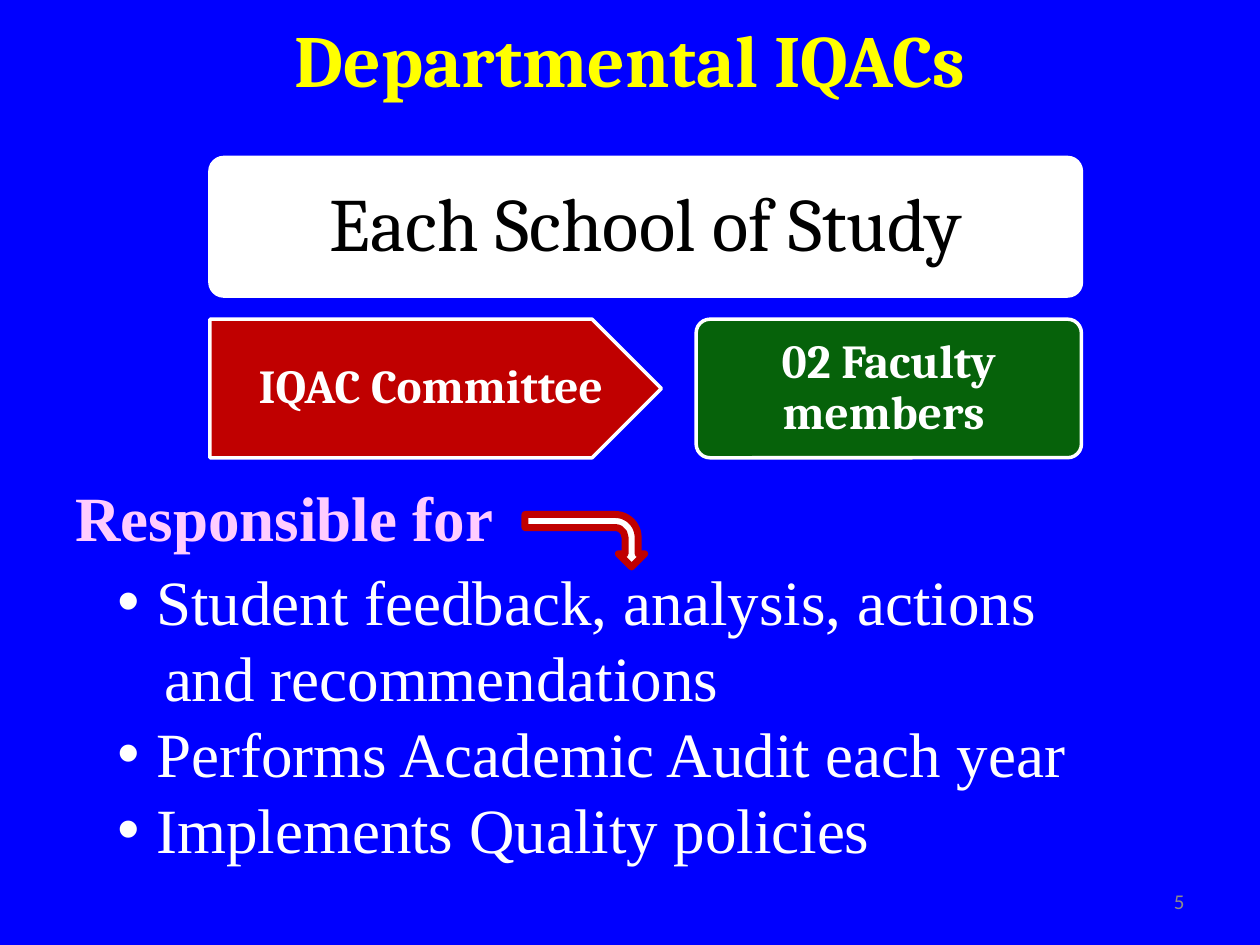
from dataclasses import dataclass
from typing import Optional

from lxml.etree import SubElement
from pptx import Presentation
from pptx.dml.color import RGBColor
from pptx.enum.shapes import MSO_SHAPE
from pptx.enum.text import MSO_ANCHOR, PP_ALIGN
from pptx.oxml.ns import qn
from pptx.util import Inches, Pt

COLORS = {
    "background": "0000FF",
    "title": "FFFF00",
    "heading": "FFCCFF",
    "white": "FFFFFF",
    "black": "000000",
    "red": "C00000",
    "green": "06620A",
    "number": "8C8C8C",
}
SLIDE_WIDTH, SLIDE_HEIGHT = Inches(10), Inches(7.5)
COLUMN, ROW = SLIDE_WIDTH / 120, SLIDE_HEIGHT / 90
CARD_LEFT, CARD_WIDTH, CARD_HEIGHT = 20, 83, 13.2
CARD_ROWS = (15, 30.4)
MEMBERS_WIDTH = 36.7


@dataclass(frozen=True)
class Frame:
    column: float
    row: float
    columns: float
    rows: float

    def lengths(self) -> tuple[int, int, int, int]:
        return (round(self.column * COLUMN), round(self.row * ROW),
                round(self.columns * COLUMN), round(self.rows * ROW))


@dataclass(frozen=True)
class Style:
    font: str
    size: float
    color: str
    bold: bool = False


@dataclass(frozen=True)
class Label:
    text: str
    frame: Frame
    style: Style
    alignment: PP_ALIGN = PP_ALIGN.LEFT
    anchor: MSO_ANCHOR = MSO_ANCHOR.MIDDLE
    wrap: bool = True


@dataclass(frozen=True)
class Card:
    text: str
    frame: Frame
    style: Style
    kind: MSO_SHAPE
    fill: str
    corner: Optional[float] = None
    margin_left: float = 0.11
    margin_right: float = 0.11


@dataclass(frozen=True)
class Duty:
    text: str
    indent: float
    bullet: bool = True


CARD_STYLE = Style("Cambria", 27, "white", True)
DUTY_STYLE = Style("Times New Roman", 36, "white")
DUTY_FRAME = Frame(10, 53, 105, 30.2)
ARROW_FRAME = Frame(53.2, 45.8, 5, 11.4)

LABELS = [
    Label("Departmental IQACs", Frame(6, 0, 108, 11),
          Style("Cambria", 42, "title", True), PP_ALIGN.CENTER),
    Label("5", Frame(86, 83.4, 28, 4.8),
          Style("Calibri", 12, "number"), PP_ALIGN.RIGHT),
    Label("Responsible for", Frame(6, 45, 45.6, 8.5),
          Style("Times New Roman", 36, "heading", True),
          anchor=MSO_ANCHOR.TOP, wrap=False),
]
CARDS = [
    Card("Each School of Study",
         Frame(CARD_LEFT, CARD_ROWS[0], CARD_WIDTH, CARD_HEIGHT),
         Style("Cambria", 43, "black"),
         MSO_SHAPE.ROUNDED_RECTANGLE, "white", 0.1),
    Card("IQAC Committee ",
         Frame(CARD_LEFT, CARD_ROWS[1], 43, CARD_HEIGHT),
         CARD_STYLE, MSO_SHAPE.PENTAGON, "red",
         margin_left=0.3, margin_right=0.02),
    Card("02 Faculty members ",
         Frame(CARD_LEFT + CARD_WIDTH - MEMBERS_WIDTH, CARD_ROWS[1],
               MEMBERS_WIDTH, CARD_HEIGHT),
         CARD_STYLE, MSO_SHAPE.ROUNDED_RECTANGLE, "green", 0.1),
]
DUTIES = [
    Duty("Student feedback, analysis, actions", 0.31),
    Duty("and recommendations", 0.37, False),
    Duty("Performs Academic Audit each year", 0.31),
    Duty("Implements Quality policies", 0.31),
]


def color(name: str) -> RGBColor:
    return RGBColor.from_string(COLORS[name])


def add_run(paragraph, text: str, style: Style) -> None:
    run = paragraph.add_run()
    run.text = text
    run.font.name = style.font
    run.font.size = Pt(style.size)
    run.font.bold = style.bold
    run.font.color.rgb = color(style.color)


def add_label(slide, label: Label) -> None:
    text_frame = slide.shapes.add_textbox(*label.frame.lengths()).text_frame
    text_frame.word_wrap = label.wrap
    text_frame.vertical_anchor = label.anchor
    paragraph = text_frame.paragraphs[0]
    paragraph.alignment = label.alignment
    add_run(paragraph, label.text, label.style)


def add_outlined_shape(slide, kind: MSO_SHAPE, frame: Frame,
                       fill: str, line: str, line_width: float):
    shape = slide.shapes.add_shape(kind, *frame.lengths())
    shape.shadow.inherit = False
    shape.fill.solid()
    shape.fill.fore_color.rgb = color(fill)
    shape.line.color.rgb = color(line)
    shape.line.width = Pt(line_width)
    return shape


def add_card(slide, card: Card) -> None:
    shape = add_outlined_shape(slide, card.kind, card.frame,
                               card.fill, "white", 2)
    if card.corner is not None:
        shape.adjustments[0] = card.corner
    text_frame = shape.text_frame
    text_frame.word_wrap = True
    text_frame.vertical_anchor = MSO_ANCHOR.MIDDLE
    text_frame.margin_left = Inches(card.margin_left)
    text_frame.margin_right = Inches(card.margin_right)
    paragraph = text_frame.paragraphs[0]
    paragraph.alignment = PP_ALIGN.CENTER
    paragraph.line_spacing = 0.9
    add_run(paragraph, card.text, card.style)


def add_duties(slide, duties: list[Duty]) -> None:
    text_frame = slide.shapes.add_textbox(*DUTY_FRAME.lengths()).text_frame
    text_frame.word_wrap = True
    for index, duty in enumerate(duties):
        paragraph = text_frame.add_paragraph() if index else text_frame.paragraphs[0]
        paragraph.line_spacing = Pt(43.4)
        properties = paragraph._p.get_or_add_pPr()
        properties.set("marL", str(Inches(duty.indent)))
        properties.set("indent", str(-Inches(duty.indent) if duty.bullet else 0))
        if duty.bullet:
            SubElement(properties, qn("a:buFont"), typeface="Arial")
            SubElement(properties, qn("a:buChar"), char="•")
        add_run(paragraph, duty.text, DUTY_STYLE)


def main() -> None:
    presentation = Presentation()
    presentation.slide_width, presentation.slide_height = SLIDE_WIDTH, SLIDE_HEIGHT
    slide = presentation.slides.add_slide(presentation.slide_layouts[6])
    slide.background.fill.solid()
    slide.background.fill.fore_color.rgb = color("background")
    for card in CARDS:
        add_card(slide, card)
    for label in LABELS:
        add_label(slide, label)
    add_duties(slide, DUTIES)
    arrow = add_outlined_shape(slide, MSO_SHAPE.BENT_ARROW, ARROW_FRAME,
                               "white", "red", 4)
    arrow.rotation = 90
    presentation.save("out.pptx")


if __name__ == "__main__":
    main()
